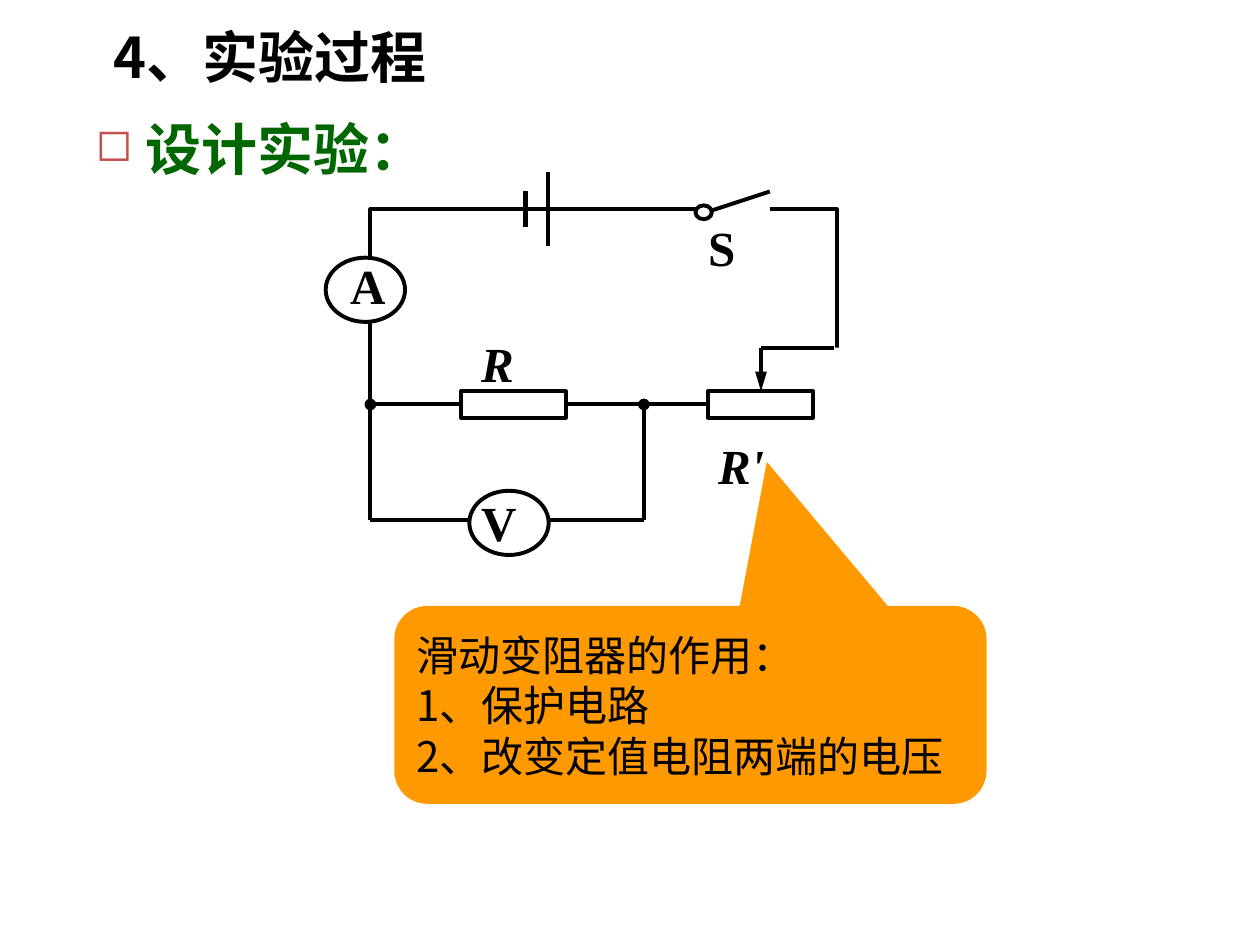
from typing import NamedTuple, Optional

from pptx import Presentation
from pptx.dml.color import RGBColor
from pptx.enum import shapes as kinds, text as styles
from pptx.oxml.ns import qn
from pptx.util import Inches, Pt
from lxml import etree

COLORS = {
    "ink": "000000",
    "paper": "FFFFFF",
    "note": "FF9900",
    "heading": "006600",
    "bullet": "C0504D",
}
CJK = "Noto Sans CJK SC"
SERIF = "Times New Roman"
LINE_WIDTH = 2.25
OVAL = kinds.MSO_SHAPE.OVAL

LEFT, TAP, RIGHT = 2.94, 5.11, 6.64
TOP, MIDDLE, BOTTOM = 1.66, 3.21, 4.13
RESISTOR_HEIGHT = 0.21
RESISTOR_TOP = MIDDLE - RESISTOR_HEIGHT / 2
RESISTOR_X, RHEOSTAT_X = 3.66, 5.62
SLIDER_X, SLIDER_Y = 6.04, 2.76
PIVOT_X, CONTACT_X = 5.59, 6.11
METER_WIDTH, METER_HEIGHT = 0.63, 0.51


class Part(NamedTuple):
    left: float
    top: float
    width: float
    height: float
    preset: kinds.MSO_SHAPE = kinds.MSO_SHAPE.RECTANGLE
    fill: Optional[str] = "paper"
    line: Optional[str] = "ink"


class Wire(NamedTuple):
    x1: float
    y1: float
    x2: float
    y2: float
    width: float = LINE_WIDTH
    end: Optional[str] = None


class Label(NamedTuple):
    wording: str
    left: float
    top: float
    width: float
    height: float
    italic: bool = False
    inset: bool = True


def plate(x: float, length: float, width: float) -> Wire:
    return Wire(x, TOP - length / 2, x, TOP + length / 2, width)


def resistor(left: float) -> Part:
    return Part(left, RESISTOR_TOP, 0.83, RESISTOR_HEIGHT)


def gap(left: float, right: float, top: float, bottom: float) -> Part:
    return Part(left, top, right - left, bottom - top, line=None)


def meter(x: float, y: float) -> Part:
    return Part(x - METER_WIDTH / 2, y - METER_HEIGHT / 2,
                METER_WIDTH, METER_HEIGHT, OVAL)


def rgb(name: str) -> RGBColor:
    return RGBColor.from_string(COLORS[name])


def style(paragraph, face: str, size: int, color: str = "ink",
          bold: bool = False, italic: bool = False) -> None:
    font = paragraph.font
    font.name, font.size, font.bold, font.italic = face, Pt(size), bold, italic
    font.color.rgb = rgb(color)
    defaults = paragraph._p.get_or_add_pPr().find(qn("a:defRPr"))
    etree.SubElement(defaults, qn("a:ea")).set("typeface", face)


def grow(frame, wording: str):
    frame.word_wrap = True
    frame.auto_size = styles.MSO_AUTO_SIZE.SHAPE_TO_FIT_TEXT
    frame.text = wording
    return frame.paragraphs[0]


def draw_part(slide, part: Part):
    shape = slide.shapes.add_shape(
        part.preset, Inches(part.left), Inches(part.top),
        Inches(part.width), Inches(part.height))
    shape.shadow.inherit = False
    if part.fill:
        shape.fill.solid()
        shape.fill.fore_color.rgb = rgb(part.fill)
    else:
        shape.fill.background()
    if part.line:
        shape.line.color.rgb = rgb(part.line)
        shape.line.width = Pt(LINE_WIDTH)
    else:
        shape.line.fill.background()
    return shape


def draw_wire(slide, wire: Wire) -> None:
    connector = slide.shapes.add_connector(
        kinds.MSO_CONNECTOR.STRAIGHT, Inches(wire.x1), Inches(wire.y1),
        Inches(wire.x2), Inches(wire.y2))
    connector.line.color.rgb = rgb("ink")
    connector.line.width = Pt(wire.width)
    properties = connector._element.spPr
    if wire.end:
        tail = etree.SubElement(properties.find(qn("a:ln")), qn("a:tailEnd"))
        tail.set("type", wire.end)
        if wire.end == "triangle":
            tail.set("len", "lg")
    etree.SubElement(properties, qn("a:effectLst"))


def draw_label(slide, label: Label) -> None:
    frame = slide.shapes.add_textbox(
        Inches(label.left), Inches(label.top),
        Inches(label.width), Inches(label.height)).text_frame
    if not label.inset:
        frame.margin_left = frame.margin_right = 0
        frame.margin_top = frame.margin_bottom = 0
    style(grow(frame, label.wording), SERIF, 28, bold=True, italic=label.italic)


def draw_title(slide) -> None:
    title = slide.shapes.title
    title.left, title.top = Inches(0.12), Inches(0.13)
    title.width, title.height = Inches(4.05), Inches(0.63)
    title.text_frame.vertical_anchor = styles.MSO_ANCHOR.TOP
    paragraph = grow(title.text_frame, "4、实验过程")
    paragraph.alignment = styles.PP_ALIGN.CENTER
    style(paragraph, CJK, 32, bold=True)


def draw_heading(slide) -> None:
    box = slide.shapes.add_textbox(Inches(0.66), Inches(0.7), Inches(4.49), Inches(0.8))
    heading = grow(box.text_frame, " 设计实验：")
    heading.line_spacing = 1.3
    style(heading, CJK, 32, "heading", bold=True)
    defaults = heading._p.get_or_add_pPr().find(qn("a:defRPr"))
    color = etree.Element(qn("a:buClr"))
    etree.SubElement(color, qn("a:srgbClr")).set("val", COLORS["bullet"])
    size = etree.Element(qn("a:buSzPct"), val="80000")
    mark = etree.Element(qn("a:buChar"), char="◻")
    for element in (color, size, mark):
        defaults.addprevious(element)


def draw_callout(slide) -> None:
    callout = draw_part(slide, Part(
        3.13, 4.81, 4.7, 1.57, kinds.MSO_SHAPE.ROUNDED_RECTANGULAR_CALLOUT, "note", None))
    for index, value in enumerate((0.129, -1.229, 0.167)):
        callout.adjustments[index] = value
    frame = callout.text_frame
    frame.word_wrap = False
    frame.vertical_anchor = styles.MSO_ANCHOR.MIDDLE
    frame.text = "滑动变阻器的作用：\n1、保护电路\n2、改变定值电阻两端的电压"
    for paragraph in frame.paragraphs:
        paragraph.alignment = styles.PP_ALIGN.LEFT
        style(paragraph, CJK, 24)


CIRCUIT = [
    Part(LEFT, TOP, RIGHT - LEFT, MIDDLE - TOP, fill=None),
    plate(4.35, 0.59, LINE_WIDTH),
    plate(4.17, 0.29, 3),
    gap(PIVOT_X, CONTACT_X, 1.52, 1.81),
    Wire(PIVOT_X, 1.69, CONTACT_X, 1.52),
    Part(5.52, 1.63, 0.13, 0.11, OVAL),
    resistor(RESISTOR_X),
    gap(RHEOSTAT_X, 6.95, SLIDER_Y, 3.32),
    Wire(SLIDER_X, SLIDER_Y, 6.62, SLIDER_Y),
    Wire(SLIDER_X, SLIDER_Y, SLIDER_X, RESISTOR_TOP, end="triangle"),
    resistor(RHEOSTAT_X),
    meter(2.9, 2.3),
    Label("A", 2.68, 1.98, 0.58, 0.62),
    Wire(LEFT, BOTTOM, TAP, BOTTOM),
    *(Wire(x, BOTTOM, x, MIDDLE, end="oval") for x in (LEFT, TAP)),
    meter(4.04, 4.15),
    Label("V", 3.72, 3.86, 0.58, 0.62),
    Label("R", 3.72, 2.6, 0.76, 0.62, italic=True),
    Label("R'", 5.7, 3.46, 1.13, 0.51, italic=True, inset=False),
    Label("S", RHEOSTAT_X, 1.73, 0.5, 0.51, inset=False),
]
DRAW = {Part: draw_part, Wire: draw_wire, Label: draw_label}


def main() -> None:
    deck = Presentation()
    deck.slide_width, deck.slide_height = Inches(10), Inches(7.5)
    slide = deck.slides.add_slide(deck.slide_layouts[5])
    draw_title(slide)
    for element in CIRCUIT:
        DRAW[type(element)](slide, element)
    draw_callout(slide)
    draw_heading(slide)
    deck.save("out.pptx")


if __name__ == "__main__":
    main()
